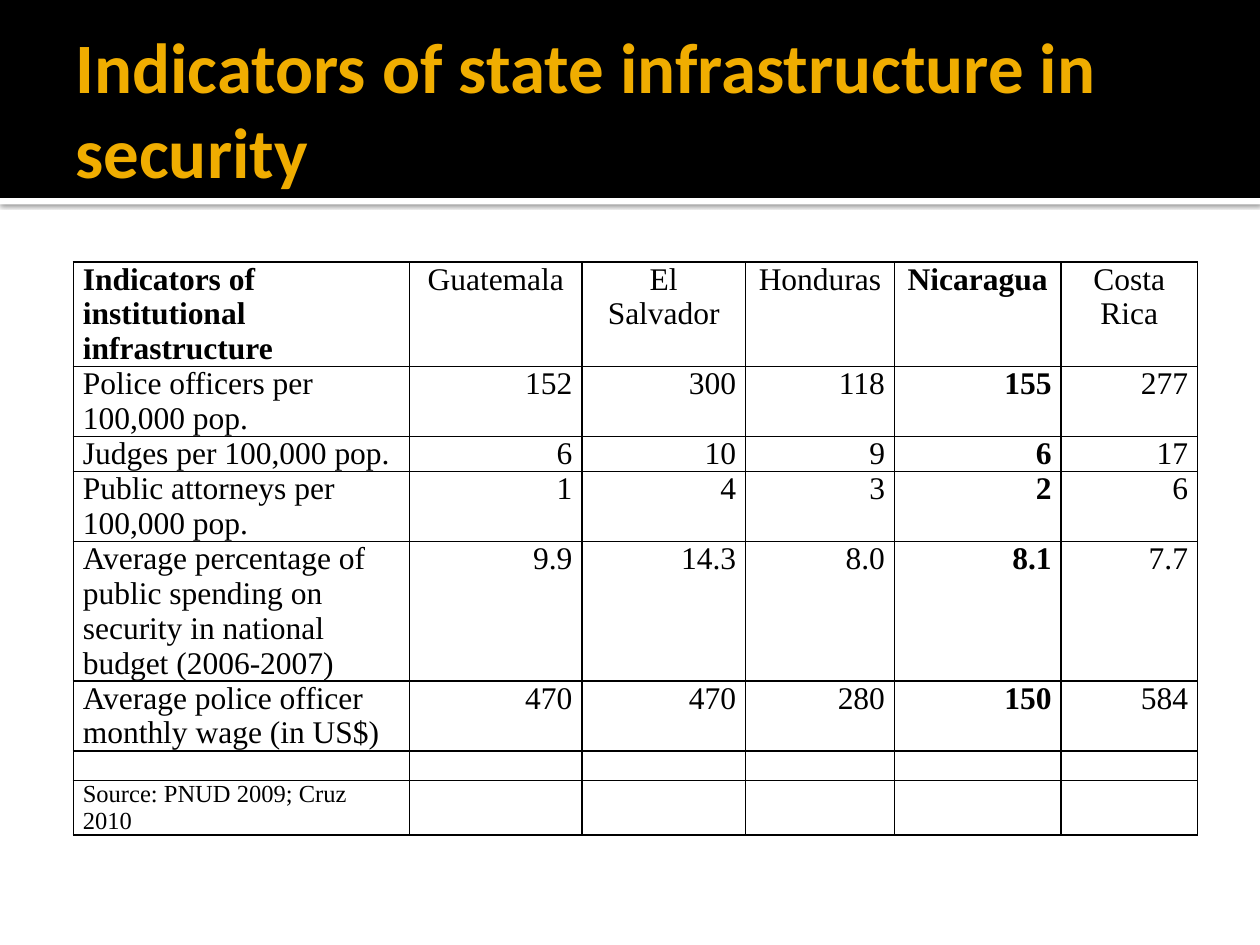
from lxml.etree import SubElement
from pptx import Presentation
from pptx.dml.color import RGBColor
from pptx.enum.shapes import MSO_SHAPE as Shape
from pptx.enum.text import MSO_ANCHOR as Anchor, MSO_AUTO_SIZE as AutoSize, PP_ALIGN as Align
from pptx.oxml import parse_xml
from pptx.oxml.ns import nsdecls, qn
from pptx.util import Cm, Pt

BLACK = RGBColor(0x00, 0x00, 0x00)
WHITE = RGBColor(0xFF, 0xFF, 0xFF)
AMBER = RGBColor(0xF0, 0xAD, 0x00)
SERIF = "Times New Roman"
SLIDE_WIDTH, SLIDE_HEIGHT = Cm(25.4), Cm(19.05)
BANNER_HEIGHT = Cm(3.99)

COLUMN_WIDTHS = [6.78, 3.47, 3.3, 3.0, 3.36, 2.75]
ROW_HEIGHTS = [2.11, 1.41, 0.7, 1.41, 2.81, 1.41, 0.55, 1.09]
BOLD_COLUMN = 4
SMALL_ROWS_FROM = 6
ROWS = [
    ["Indicators of institutional infrastructure",
     "Guatemala", "El Salvador", "Honduras", "Nicaragua", "Costa Rica"],
    ["Police officers per 100,000 pop.", "152", "300", "118", "155", "277"],
    ["Judges per 100,000 pop.", "6", "10", "9", "6", "17"],
    ["Public attorneys per 100,000 pop.", "1", "4", "3", "2", "6"],
    ["Average percentage of public spending on security in national budget (2006-2007)",
     "9.9", "14.3", "8.0", "8.1", "7.7"],
    ["Average police officer monthly wage (in US$)", "470", "470", "280", "150", "584"],
    [""] * len(COLUMN_WIDTHS),
    ["Source: PNUD 2009; Cruz 2010"] + [""] * (len(COLUMN_WIDTHS) - 1),
]


def write_text(frame, text, font=SERIF, size=18, color=BLACK, bold=False, align=Align.LEFT):
    para = frame.paragraphs[0]
    para.alignment = align
    if not text:
        # An empty cell still takes its line height from the end mark
        SubElement(para._p, qn("a:endParaRPr"), sz=str(size * 100))
        return
    span = para.add_run()
    span.text = text
    span.font.name = font
    span.font.size = Pt(size)
    span.font.bold = bold
    span.font.color.rgb = color


def set_insets(target, left, top, right, bottom):
    target.margin_left, target.margin_top = Cm(left), Cm(top)
    target.margin_right, target.margin_bottom = Cm(right), Cm(bottom)


def add_band(page, top, height, color):
    band = page.shapes.add_shape(Shape.RECTANGLE, 0, top, SLIDE_WIDTH, height)
    band.shadow.inherit = False
    band.fill.solid()
    band.fill.fore_color.rgb = color
    band.line.fill.background()
    return band


def add_drop_shadow(shape):
    effects = shape._element.spPr.find(qn("a:effectLst"))
    effects.append(parse_xml(
        f'<a:outerShdw {nsdecls("a")} blurRad="{Pt(2.5)}" dist="{Pt(0.8)}" dir="5400000" '
        'algn="t" rotWithShape="0"><a:srgbClr val="000000"><a:alpha val="60000"/>'
        '</a:srgbClr></a:outerShdw>'))


def place_title(page, text):
    title = page.shapes.title
    title.left, title.top, title.width, title.height = Cm(1.27), Cm(0.43), Cm(22.86), Cm(3.48)
    frame = title.text_frame
    frame.word_wrap = True
    frame.auto_size = AutoSize.NONE
    frame.vertical_anchor = Anchor.MIDDLE
    set_insets(frame, 0.25, 0.13, 0.13, 0.13)
    write_text(frame, text, font="Calibri", size=40.5, color=AMBER, bold=True)
    page.shapes._spTree.append(title._element)  # in front of the banner


def add_borders(cell):
    properties = cell._tc.get_or_add_tcPr()
    for index, side in enumerate(("lnL", "lnR", "lnT", "lnB")):
        properties.insert(index, parse_xml(
            f'<a:{side} {nsdecls("a")} w="{Pt(1)}"><a:solidFill>'
            f'<a:srgbClr val="{BLACK}"/></a:solidFill></a:{side}>'))


def add_indicator_table(page):
    table = page.shapes.add_table(
        len(ROWS), len(COLUMN_WIDTHS), Cm(1.48), Cm(5.28),
        Cm(sum(COLUMN_WIDTHS)), Cm(sum(ROW_HEIGHTS))).table
    table.first_row = table.horz_banding = False
    for column, width in zip(table.columns, COLUMN_WIDTHS):
        column.width = Cm(width)
    for row, height in zip(table.rows, ROW_HEIGHTS):
        row.height = Cm(height)
    for r, texts in enumerate(ROWS):
        for c, text in enumerate(texts):
            cell = table.cell(r, c)
            cell.fill.background()
            add_borders(cell)
            set_insets(cell, 0.19, 0, 0.19, 0)
            align = Align.LEFT if c == 0 else Align.CENTER if r == 0 else Align.RIGHT
            write_text(cell.text_frame, text, align=align,
                       size=14 if r >= SMALL_ROWS_FROM else 18,
                       bold=c == BOLD_COLUMN or r == c == 0)


def main():
    deck = Presentation()
    deck.slide_width, deck.slide_height = SLIDE_WIDTH, SLIDE_HEIGHT
    page = deck.slides.add_slide(deck.slide_layouts[5])

    # Banner with a shadowed white edge below it
    add_drop_shadow(add_band(page, BANNER_HEIGHT, Cm(0.13), WHITE))
    add_band(page, 0, BANNER_HEIGHT, BLACK)
    place_title(page, "Indicators of state infrastructure in security")

    # Country comparison
    add_indicator_table(page)
    deck.save("out.pptx")


if __name__ == "__main__":
    main()
